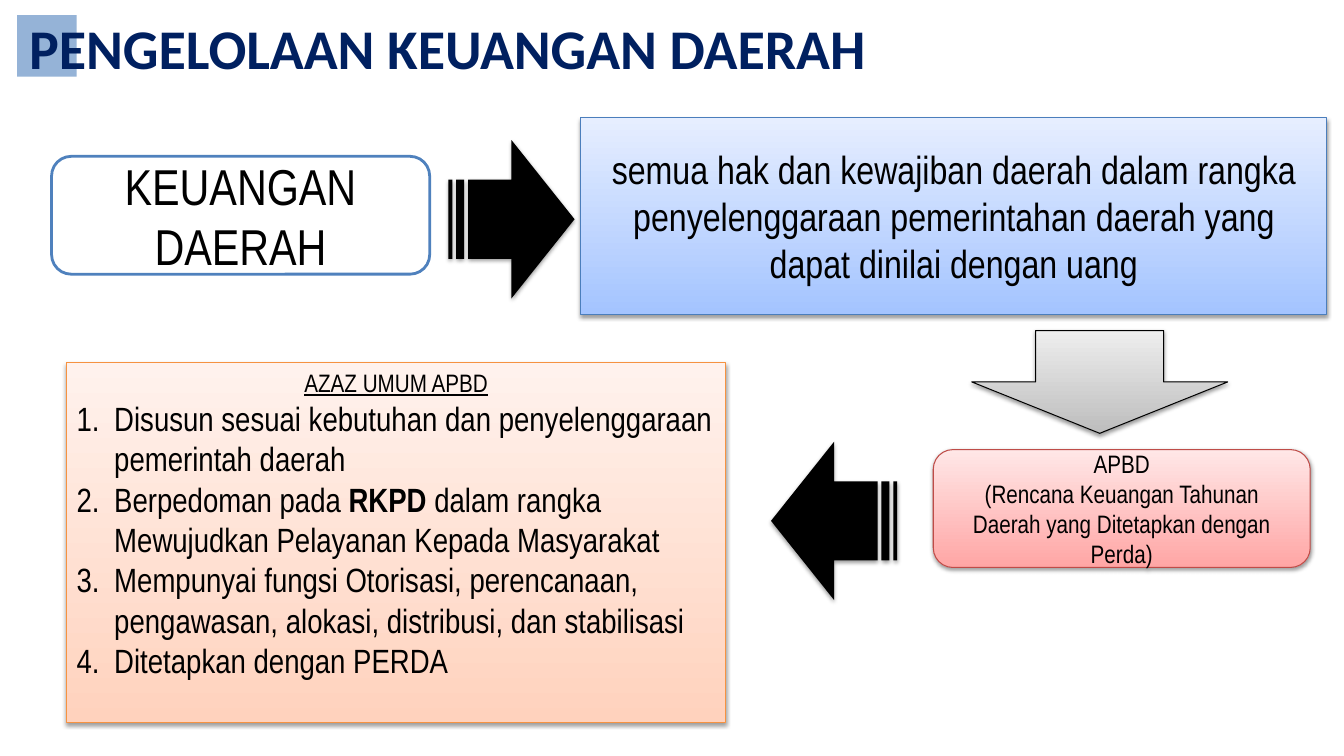
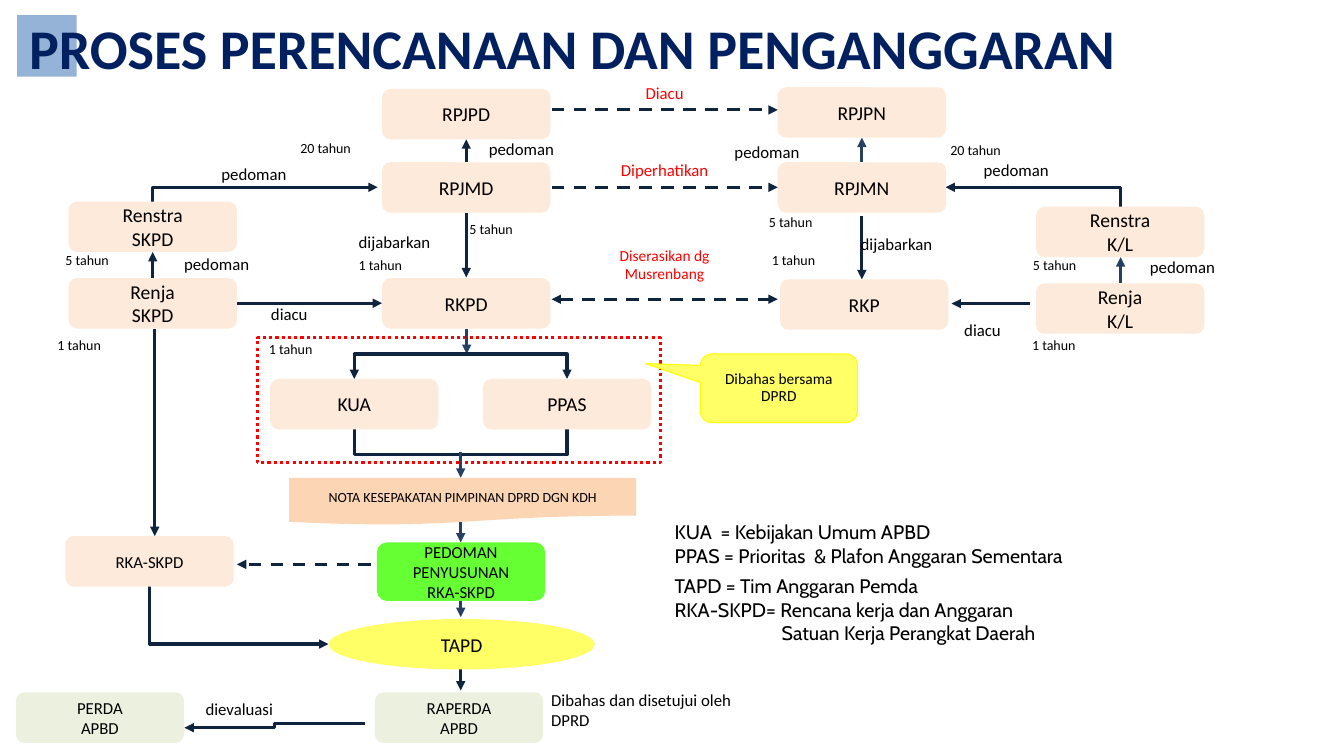
from dataclasses import dataclass
from typing import Any

from lxml.etree import SubElement
from pptx import Presentation
from pptx.dml.color import RGBColor
from pptx.enum.dml import MSO_LINE
from pptx.enum.shapes import MSO_CONNECTOR, MSO_SHAPE
from pptx.enum.text import MSO_ANCHOR, MSO_AUTO_SIZE, PP_ALIGN
from pptx.oxml.ns import qn
from pptx.util import Cm, Pt

COLORS = {
    "title": "002060", "marker": "95B3D7", "text": "000000", "white": "FFFFFF",
    "outline": "4F81BD", "navy": "0F243E", "steel": "254061", "red": "FF0000",
    "plan": "FDEADA", "note": "FCD5B5", "guide": "66FF33", "law": "EBF1DE",
    "yellow": "FFFF66", "yellow_line": "FFFF00",
    "blue_top": "E6EEFF", "blue_bottom": "A4C4FF", "blue_line": "4B7EBC",
    "orange_top": "FFF2ED", "orange_bottom": "FFD2BD", "orange_line": "F69240",
    "pink_top": "FFE7E7", "pink_bottom": "FFA6A5", "pink_line": "BF4C48",
    "gray_top": "EEEEEE", "gray_bottom": "BDBDBD",
}
NODE_W, NODE_H = 4.24, 1.27


def rgb(name):
    return RGBColor.from_string(COLORS[name])


def style_text(tf, size, color="text", font="Calibri", align=PP_ALIGN.LEFT):
    for p in tf.paragraphs:
        p.alignment = align
        for r in p.runs:
            r.font.size, r.font.name = Pt(size), font
            r.font.color.rgb = rgb(color)


def add_shadow(shape):
    effects = shape.element.spPr.find(qn("a:effectLst"))
    shadow = SubElement(effects, qn("a:outerShdw"), blurRad=str(Pt(3.1)),
                        dist=str(Pt(1.6)), dir="5400000", rotWithShape="0")
    color = SubElement(shadow, qn("a:srgbClr"), val=COLORS["text"])
    SubElement(color, qn("a:alpha"), val="38000")


def add_numbering(p, indent):
    pPr = p._p.get_or_add_pPr()
    pPr.set("marL", str(indent))
    pPr.set("indent", str(-indent))
    SubElement(pPr, qn("a:buAutoNum"), type="arabicPeriod")


@dataclass
class Region:
    """Places shapes, labels and lines in cm from its own top-left corner."""
    s: Any
    x: float
    y: float

    def at(self, x, y):
        return Cm(self.x + x), Cm(self.y + y)

    def shape(self, kind, x, y, w, h, fill=None, line=None, width=0.75, shadow=False):
        """A pair of colours as fill gives a gradient from top to bottom."""
        sp = self.s.shapes.add_shape(kind, *self.at(x, y), Cm(w), Cm(h))
        sp.shadow.inherit = False
        if fill is None:
            sp.fill.background()
        elif isinstance(fill, tuple):
            sp.fill.gradient()
            sp.fill.gradient_angle = 270
            for stop, name in zip(sp.fill.gradient_stops, fill):
                stop.color.rgb = rgb(name)
        else:
            sp.fill.solid()
            sp.fill.fore_color.rgb = rgb(fill)
        if line:
            sp.line.color.rgb = rgb(line)
            sp.line.width = Pt(width)
        else:
            sp.line.fill.background()
        if shadow:
            add_shadow(sp)
        return sp

    def node(self, text, x, y, fill="plan", size=14, w=NODE_W, h=NODE_H,
             kind=MSO_SHAPE.ROUNDED_RECTANGLE, wrap=False, **look):
        sp = self.shape(kind, x, y, w, h, fill, **look)
        tf = sp.text_frame
        tf.text = text
        tf.word_wrap = wrap
        tf.vertical_anchor = MSO_ANCHOR.MIDDLE
        style_text(tf, size, align=PP_ALIGN.CENTER)
        return sp

    def label(self, text, x, y, size=12, w=3.2, h=0.76, **look):
        tf = self.s.shapes.add_textbox(*self.at(x, y), Cm(w), Cm(h)).text_frame
        tf.word_wrap = True
        tf.text = text
        style_text(tf, size, **look)
        return tf

    def labels(self, size, items):
        for text, x, y in items:
            self.label(text, x, y, size)

    def line(self, start, end, color="navy", ends=("tail",), dash=False,
             kind=MSO_CONNECTOR.STRAIGHT):
        cx = self.s.shapes.add_connector(kind, *self.at(*start), *self.at(*end))
        cx.line.color.rgb = rgb(color)
        cx.line.width = Pt(2.25)
        if dash:
            cx.line.dash_style = MSO_LINE.DASH
        spPr = cx.element.spPr
        for end_name in ends:
            SubElement(spPr.find(qn("a:ln")), qn(f"a:{end_name}End"), type="triangle")
        SubElement(spPr, qn("a:effectLst"))
        return cx

    def corner(self, start, end, ends=("head",)):
        """Runs level from start, then turns once towards end."""
        cx = self.line(start, end, ends=ends, kind=MSO_CONNECTOR.ELBOW)
        cx.element.spPr.find(qn("a:prstGeom")).set("prst", "bentConnector2")


def add_slide(prs, title):
    s = prs.slides.add_slide(prs.slide_layouts[5])
    marker = Region(s, 0.43, 0.38).shape(MSO_SHAPE.RECTANGLE, 0, 0, 1.5, 1.55, "marker")
    sp = s.shapes.title
    sp.left, sp.top, sp.width, sp.height = Cm(0.48), Cm(0.2), Cm(33.2), Cm(1.96)
    tf = sp.text_frame
    tf.text = title
    tf.auto_size = MSO_AUTO_SIZE.NONE
    tf.vertical_anchor = MSO_ANCHOR.MIDDLE
    style_text(tf, 40, "title")
    tf.paragraphs[0].runs[0].font.bold = True
    marker.element.addnext(sp.element)
    return s


def finance_definition(s, x, y):
    reg = Region(s, x, y)
    term = reg.node("KEUANGAN DAERAH", 0, 0.97, "white", 36, 9.53, 2.97,
                    wrap=True, line="outline", width=2)
    meaning = reg.node("semua hak dan kewajiban daerah dalam rangka penyelenggaraan "
                       "pemerintahan daerah yang dapat dinilai dengan uang",
                       13.33, 0, ("blue_top", "blue_bottom"), 28, 18.8, 4.95,
                       MSO_SHAPE.RECTANGLE, True, line="blue_line", shadow=True)
    for sp in (term, meaning):
        for r in sp.text_frame.paragraphs[0].runs:
            r.font.name = "Arial Narrow"
    reg.shape(MSO_SHAPE.STRIPED_RIGHT_ARROW, 10, 0.56, 3.18, 3.99, "text", shadow=True)


def budget_definition(s, x, y):
    reg = Region(s, x, y)
    reg.shape(MSO_SHAPE.DOWN_ARROW, 5.06, 0, 6.45, 2.59, ("gray_top", "gray_bottom"),
              "text", shadow=True)
    sp = reg.node("APBD\n(Rencana Keuangan Tahunan Daerah yang Ditetapkan dengan Perda)",
                  4.09, 3, ("pink_top", "pink_bottom"), 18, 9.5, 2.97,
                  wrap=True, line="pink_line", shadow=True)
    style_text(sp.text_frame, 18, font="Arial Narrow", align=PP_ALIGN.CENTER)
    arrow = reg.shape(MSO_SHAPE.STRIPED_RIGHT_ARROW, 0, 2.8, 3.18, 3.99, "text", shadow=True)
    arrow.rotation = 180


def budget_principles(s, x, y):
    sp = Region(s, x, y).shape(MSO_SHAPE.RECTANGLE, 0, 0, 16.61, 9.07,
                               ("orange_top", "orange_bottom"), "orange_line", shadow=True)
    tf = sp.text_frame
    tf.word_wrap = True
    tf.vertical_anchor = MSO_ANCHOR.TOP
    tf.text = "AZAZ UMUM APBD"
    principles = [
        ("Disusun sesuai kebutuhan dan penyelenggaraan pemerintah daerah",),
        ("Berpedoman pada ", "RKPD ", "dalam rangka Mewujudkan Pelayanan Kepada Masyarakat"),
        ("Mempunyai fungsi Otorisasi, perencanaan, pengawasan, alokasi, distribusi, "
         "dan stabilisasi",),
        ("Ditetapkan dengan PERDA",),
    ]
    for parts in principles:
        p = tf.add_paragraph()
        for part in parts:
            r = p.add_run()
            r.text = part
            r.font.bold = part == "RKPD "
        add_numbering(p, Cm(0.95))
    style_text(tf, 24, font="Arial Narrow")
    heading = tf.paragraphs[0]
    heading.alignment = PP_ALIGN.CENTER
    heading.runs[0].font.size = Pt(18)
    heading.runs[0].font.underline = True


def regional_plans(s, x, y):
    reg = Region(s, x, y)
    reg.line((10.55, 1.85), (10.55, 1.27))
    reg.line((10.55, 3.12), (10.55, 4.75))
    reg.line((2.65, 4.77), (2.65, 4.11))
    reg.line((4.77, 5.4), (8.43, 5.4))
    reg.corner((8.32, 2.48), (2.65, 2.84))
    for text, left, top in [("RPJPD", 8.43, 0), ("RPJMD", 8.43, 1.85), ("RKPD", 8.43, 4.77),
                            ("Renstra\nSKPD", 0.53, 2.84), ("Renja\nSKPD", 0.53, 4.77)]:
        reg.node(text, left, top)
    reg.labels(10, [("20 tahun", 6.12, 1.14), ("5 tahun", 10.38, 3.2), ("1 tahun", 7.59, 4.11),
                    ("5 tahun", 0.2, 3.98), ("1 tahun", 0, 6.12)])
    reg.labels(12, [("pedoman", 10.87, 1.14), ("pedoman", 4.13, 1.75), ("pedoman", 3.19, 4.03),
                    ("dijabarkan", 7.59, 3.48), ("diacu", 5.38, 5.28)])


def national_plans(s, x, y):
    reg = Region(s, x, y)
    reg.line((3.52, 1.89), (3.52, 1.27), "steel")
    reg.line((3.52, 3.24), (3.52, 4.84))
    reg.line((10.04, 4.94), (10.04, 4.28), "steel")
    reg.line((7.76, 5.45), (5.78, 5.45))
    reg.corner((5.63, 2.52), (10.04, 3.01))
    for text, left, top in [("RPJPN", 1.4, 0), ("RPJMN", 1.4, 1.89), ("RKP", 1.46, 4.84),
                            ("Renstra\nK/L", 7.91, 3.01), ("Renja\nK/L", 7.91, 4.94)]:
        reg.node(text, left, top)
    reg.labels(10, [("20 tahun", 5.5, 1.25), ("5 tahun", 0.93, 3.06), ("1 tahun", 1, 4.02),
                    ("5 tahun", 7.58, 4.15), ("1 tahun", 7.56, 6.16)])
    reg.labels(12, [("pedoman", 0.06, 1.25), ("pedoman", 6.34, 1.71), ("pedoman", 10.53, 4.15),
                    ("dijabarkan", 3.24, 3.57), ("diacu", 5.85, 5.72)])


def plan_links(s, x, y):
    reg = Region(s, x, y)
    for text, size, top, line_y, ends in [
            ("Diacu", 12, 0, 0.81, ("tail",)),
            ("Diperhatikan", 12, 1.95, 2.76, ("tail",)),
            ("Diserasikan dg\nMusrenbang", 11, 4.11, 5.58, ("head", "tail"))]:
        reg.label(text, 0, top, size, 5.7, color="red", align=PP_ALIGN.CENTER)
        reg.line((0, line_y), (5.7, line_y), ends=ends, dash=True)


def budget_flow(s, x, y):
    reg = Region(s, x, y)
    mid = 11.21
    frame = reg.shape(MSO_SHAPE.RECTANGLE, 6.08, 0.21, 10.16, 3.15, line="red", width=2.25)
    frame.line.dash_style = MSO_LINE.ROUND_DOT
    reg.line((11.36, 0), (11.36, 0.62), "steel")
    for text, left in [("KUA", 6.41), ("PPAS", 11.77)]:
        center = left + NODE_W / 2
        reg.corner((mid, 0.62), (center, 1.25), ("tail",))
        reg.corner((mid, 3.16), (center, 2.52), ())
        reg.node(text, left, 1.25)
    for top, bottom, color in [(3.1, 3.74, "steel"), (4.73, 5.37, "steel"),
                               (6.84, 7.25, "steel"), (8.57, 9.1, "navy")]:
        reg.line((mid, top), (mid, bottom), color)
    reg.line((3.5, 0), (3.5, 5.21))
    reg.line((8.95, 5.92), (5.57, 5.92), dash=True)
    reg.corner((7.88, 7.93), (3.38, 6.48))
    reg.line((4.25, 10.04), (8.8, 9.94), ends=("head",), kind=MSO_CONNECTOR.ELBOW)

    reg.node("NOTA KESEPAKATAN PIMPINAN DPRD DGN KDH", 6.89, 3.74, "note", 10, 8.74, 1.19,
             MSO_SHAPE.FLOWCHART_DOCUMENT, True)
    reg.node("PEDOMAN\nPENYUSUNAN\nRKA-SKPD", 9.1, 5.37, "guide", 12, h=1.47)
    reg.node("RKA-SKPD", 1.25, 5.21, size=12)
    reg.node("TAPD", 7.88, 7.3, "yellow", w=6.71, kind=MSO_SHAPE.OVAL)
    reg.node("RAPERDA\nAPBD", 9.05, 9.15, "law", 12)
    reg.node("PERDA\nAPBD", 0, 9.15, "law", 12)
    callout = reg.node("Dibahas bersama DPRD", 17.25, 0.62, "yellow", 11, 3.96, 1.73,
                       MSO_SHAPE.ROUNDED_RECTANGULAR_CALLOUT, True, line="yellow_line")
    callout.adjustments[0], callout.adjustments[1] = -0.85, -0.36
    callout.text_frame.paragraphs[0].line_spacing = 0.9
    reg.label("1 tahun", 6.13, 0.16, 10)
    reg.label("dievaluasi", 4.53, 9.18)
    reg.label("Dibahas dan disetujui oleh DPRD", 13.24, 8.95, w=5.56, h=1.27)


def legend(s, x, y):
    tf = Region(s, x, y).label(
        "KUA  = Kebijakan Umum APBD\nPPAS = Prioritas  & Plafon Anggaran Sementara\n"
        "TAPD = Tim Anggaran Pemda\nRKA-SKPD= Rencana kerja dan Anggaran\n"
        "Satuan Kerja Perangkat Daerah", 0, 0, 14, 14.5, 3.5, font="Cabin")
    tf.paragraphs[2].space_before = Pt(5)
    tf.paragraphs[4]._p.get_or_add_pPr().set("marL", str(Cm(2.7)))


def main():
    prs = Presentation()
    prs.slide_width, prs.slide_height = Cm(33.87), Cm(19.05)

    s = add_slide(prs, "PENGELOLAAN KEUANGAN DAERAH")
    finance_definition(s, 1.3, 2.97)
    budget_definition(s, 19.43, 8.33)
    budget_principles(s, 1.68, 9.14)

    s = add_slide(prs, "PROSES PERENCANAAN DAN PENGANGGARAN")
    regional_plans(s, 1.2, 2.24)
    national_plans(s, 18.2, 2.2)
    plan_links(s, 13.9, 1.96)
    budget_flow(s, 0.4, 8.3)
    legend(s, 16.75, 12.98)

    prs.save("out.pptx")


if __name__ == "__main__":
    main()
